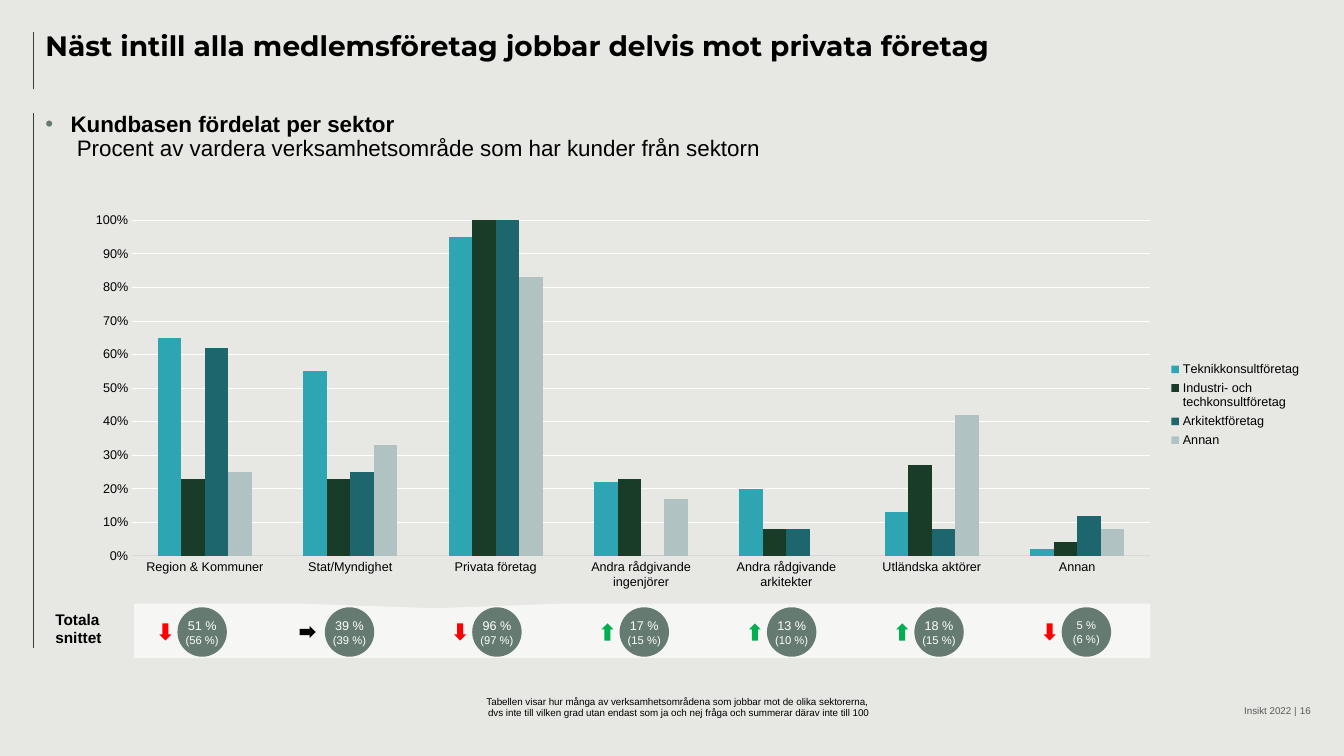
from lxml.etree import SubElement
from pptx import Presentation
from pptx.chart.data import CategoryChartData
from pptx.dml.color import RGBColor
from pptx.enum.chart import XL_CHART_TYPE, XL_LEGEND_POSITION, XL_TICK_MARK
from pptx.enum.shapes import MSO_CONNECTOR, MSO_SHAPE
from pptx.enum.text import MSO_ANCHOR, MSO_AUTO_SIZE, PP_ALIGN
from pptx.oxml import parse_xml
from pptx.oxml.ns import nsdecls, qn
from pptx.util import Inches, Pt

# Content
TITLE = "Näst intill alla medlemsföretag jobbar delvis mot privata företag"
HEADING = "Kundbasen fördelat per sektor"
SUBHEADING = " Procent av vardera verksamhetsområde som har kunder från sektorn"
NOTE = ["Tabellen visar hur många av verksamhetsområdena som jobbar mot de olika sektorerna, ",
        "dvs inte till vilken grad utan endast som ja och nej fråga och summerar därav inte till 100"]
SECTORS = ["Region & Kommuner", "Stat/Myndighet", "Privata företag",
           "Andra rådgivande ingenjörer", "Andra rådgivande arkitekter",
           "Utländska aktörer", "Annan"]

BACKGROUND = RGBColor(0xE7, 0xE8, 0xE4)
BLACK = RGBColor(0, 0, 0)
WHITE = RGBColor(0xFF, 0xFF, 0xFF)
GREY = RGBColor(0x59, 0x59, 0x59)
RULE = RGBColor(0x32, 0x3E, 0x39)
AXIS = RGBColor(0xD9, 0xD9, 0xD9)
SAGE = RGBColor(0x65, 0x7B, 0x71)
RED = RGBColor(0xFF, 0, 0)
GREEN = RGBColor(0, 0xB0, 0x50)

SERIES = [
    ("Teknikkonsultföretag", (0.65, 0.55, 0.95, 0.22, 0.2, 0.13, 0.02), RGBColor(0x2E, 0xA5, 0xB3)),
    ("Industri- och\ntechkonsultföretag", (0.23, 0.23, 1, 0.23, 0.08, 0.27, 0.04), RGBColor(0x19, 0x3C, 0x29)),
    ("Arkitektföretag", (0.62, 0.25, 1, 0, 0.08, 0.08, 0.12), RGBColor(0x1D, 0x66, 0x6E)),
    ("Annan", (0.25, 0.33, 0.83, 0.17, 0, 0.42, 0.08), RGBColor(0xB1, 0xC2, 0xC2)),
]
# Share now, share before, trend, size of the first line
AVERAGES = [("51 %", "(56 %)", "down", 9), ("39 %", "(39 %)", "level", 9),
            ("96 %", "(97 %)", "down", 9), ("17 %", "(15 %)", "up", 9),
            ("13 %", "(10 %)", "up", 9), ("18 %", "(15 %)", "up", 9),
            ("5 %", "(6 %)", "down", 8)]
# Arrow shape, colour, width, height, distance of its centre from the circle
TRENDS = {"down": (MSO_SHAPE.DOWN_ARROW, RED, 0.12, 0.17, 0.12),
          "up": (MSO_SHAPE.UP_ARROW, GREEN, 0.12, 0.17, 0.12),
          "level": (MSO_SHAPE.RIGHT_ARROW, BLACK, 0.16, 0.12, 0.17)}

# Grid
MARGIN, RULE_X = 0.45, 0.33
CIRCLE, FIRST_CIRCLE, LAST_CIRCLE = 0.49, 1.76, 10.53
STEP = (LAST_CIRCLE - FIRST_CIRCLE) / (len(AVERAGES) - 1)
MIDDLE = 6.27

deck = Presentation()
deck.slide_width, deck.slide_height = Inches(13.33), Inches(7.5)
page = deck.slides.add_slide(deck.slide_layouts[1])
page.background.fill.solid()
page.background.fill.fore_color.rgb = BACKGROUND


def place(item, left, top, width, height):
    item.left, item.top = Inches(left), Inches(top)
    item.width, item.height = Inches(width), Inches(height)


def style(font, size, color=BLACK, bold=False, name="Arial"):
    font.size, font.bold, font.name = Pt(size), bold, name
    font.color.rgb = color


def write(para, text, size, color=BLACK, bold=False, name="Arial"):
    span = para.add_run()
    span.text = text
    style(span.font, size, color, bold, name)


def inset(frame, sides, ends):
    frame.margin_left = frame.margin_right = Inches(sides)
    frame.margin_top = frame.margin_bottom = Inches(ends)


def text_box(left, top, width, height, align, anchor=MSO_ANCHOR.TOP):
    box = page.shapes.add_textbox(*map(Inches, (left, top, width, height)))
    frame = box.text_frame
    frame.word_wrap, frame.vertical_anchor = True, anchor
    frame.paragraphs[0].alignment = align
    return frame


def solid_shape(kind, left, top, width, height, color):
    shape = page.shapes.add_shape(kind, *map(Inches, (left, top, width, height)))
    shape.shadow.inherit = False
    shape.fill.solid()
    shape.fill.fore_color.rgb = color
    shape.line.fill.background()
    return shape


# Rules at the left edge
for top, bottom in ((0.32, 0.88), (1.12, 6.43)):
    rule = page.shapes.add_connector(MSO_CONNECTOR.STRAIGHT, Inches(RULE_X), Inches(top),
                                     Inches(RULE_X), Inches(bottom))
    rule.line.color.rgb, rule.line.width = RULE, Pt(0.5)
    SubElement(rule._element.spPr, qn("a:effectLst"))

# Title and heading placeholders
title, body = page.shapes.title, page.placeholders[1]
place(title, MARGIN, 0.32, 12.55, 0.56)
place(body, MARGIN, 1.12, 8.53, 0.58)
for holder in (title, body):
    frame = holder.text_frame
    inset(frame, 0, 0)
    frame.word_wrap, frame.auto_size = True, MSO_AUTO_SIZE.NONE
    frame.vertical_anchor = MSO_ANCHOR.TOP
    para = frame.paragraphs[0]
    para.alignment, para.line_spacing, para.space_before = PP_ALIGN.LEFT, 0.9, Pt(0)
write(title.text_frame.paragraphs[0], TITLE, 20, bold=True, name="Montserrat")

para = body.text_frame.paragraphs[0]
properties = para._p.get_or_add_pPr()
properties.set("marL", str(Inches(0.25)))
properties.set("indent", str(-Inches(0.25)))
bullet_color = SubElement(properties, qn("a:buClr"))
SubElement(bullet_color, qn("a:srgbClr")).set("val", str(SAGE))
SubElement(properties, qn("a:buFont")).set("typeface", "Arial")
SubElement(properties, qn("a:buChar")).set("char", "•")
write(para, HEADING, 16, bold=True)
para.add_line_break()
write(para, SUBHEADING, 16)

# Footer
for text, left, width in (("Insikt 2022 |", 8.36, 4.5), ("16", 10, 3)):
    frame = text_box(left, 6.93, width, 0.18, PP_ALIGN.RIGHT, MSO_ANCHOR.BOTTOM)
    inset(frame, 0, 0)
    write(frame.paragraphs[0], text, 7, GREY)

# Band behind the averages
band = solid_shape(MSO_SHAPE.RECTANGULAR_CALLOUT, 1.33, 5.99, 10.08, 0.54, WHITE)
band.adjustments[0], band.adjustments[1] = -0.204, 0.417
band._element.spPr.find(qn("a:xfrm")).set("flipV", "1")
band_color = band._element.spPr.find(qn("a:solidFill"))[0]
SubElement(band_color, qn("a:alpha")).set("val", "66000")

# Averages with trend arrows
for column, (now, before, trend, size) in enumerate(AVERAGES):
    left = FIRST_CIRCLE + column * STEP
    circle = solid_shape(MSO_SHAPE.OVAL, left, MIDDLE - CIRCLE / 2, CIRCLE, CIRCLE, SAGE)
    frame = circle.text_frame
    inset(frame, 0, 0.05)
    frame.word_wrap, frame.vertical_anchor = False, MSO_ANCHOR.MIDDLE
    for para, text, points in ((frame.paragraphs[0], now, size), (frame.add_paragraph(), before, 8)):
        para.alignment = PP_ALIGN.CENTER
        write(para, text, points, WHITE)
    kind, color, width, height, gap = TRENDS[trend]
    solid_shape(kind, left - gap - width / 2, MIDDLE - height / 2, width, height, color)

label = text_box(MARGIN, 6, 0.87, 0.47, PP_ALIGN.LEFT)
write(label.paragraphs[0], "Totala snittet", 11, bold=True)

note = text_box(3.85, 6.85, 5.76, 0.34, PP_ALIGN.CENTER).paragraphs[0]
write(note, NOTE[0], 7)
note.add_line_break()
write(note, NOTE[1], 7)

# Chart
data = CategoryChartData(number_format="0%")
data.categories = SECTORS
for name, values, _ in SERIES:
    data.add_series(name, values)
chart = page.shapes.add_chart(XL_CHART_TYPE.COLUMN_CLUSTERED, Inches(0.76), Inches(2.05),
                              Inches(12.25), Inches(3.93), data).chart
style(chart.font, 10)
chart.has_title = False
chart.has_legend = True
chart.legend.position = XL_LEGEND_POSITION.RIGHT
chart.legend.include_in_layout = False
style(chart.legend.font, 9)

plot = chart.plots[0]
plot.gap_width, plot.overlap, plot.vary_by_categories = 219, 0, False
for series, (_, _, color) in zip(plot.series, SERIES):
    series.format.fill.solid()
    series.format.fill.fore_color.rgb = color

for axis in (chart.category_axis, chart.value_axis):
    axis.major_tick_mark = axis.minor_tick_mark = XL_TICK_MARK.NONE
    style(axis.tick_labels.font, 9)
chart.category_axis.format.line.color.rgb = AXIS
chart.category_axis.format.line.width = Pt(0.75)
scale = chart.value_axis
scale.minimum_scale, scale.maximum_scale, scale.major_unit = 0, 1, 0.1
scale.tick_labels.number_format, scale.tick_labels.number_format_is_linked = "0%", False
scale.format.line.fill.background()
scale.major_gridlines.format.line.color.rgb = WHITE
scale.major_gridlines.format.line.width = Pt(0.75)

# Fixed inner plot area
area = chart._chartSpace.chart.plotArea
for old in area.findall(qn("c:layout")):
    area.remove(old)
area.insert(0, parse_xml(
    f'<c:layout {nsdecls("c")}><c:manualLayout><c:layoutTarget val="inner"/>'
    '<c:xMode val="edge"/><c:yMode val="edge"/><c:x val="0.045"/><c:y val="0.035"/>'
    '<c:w val="0.824"/><c:h val="0.847"/></c:manualLayout></c:layout>'))

deck.save("out.pptx")
